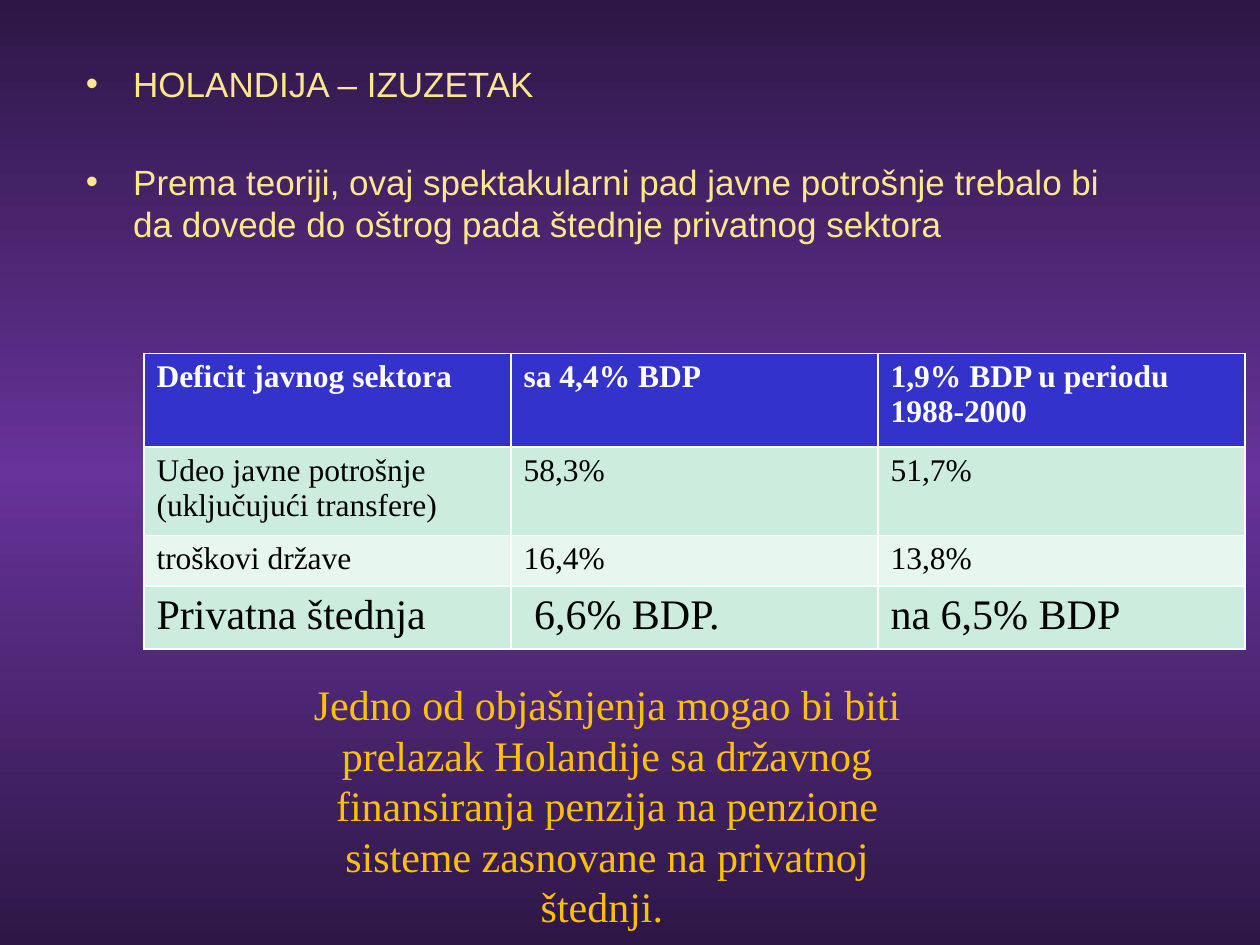
"""Build a slide on the Dutch exception: public spending and private savings."""
from copy import deepcopy

from lxml.etree import SubElement
from pptx import Presentation
from pptx.dml.color import RGBColor
from pptx.enum.text import PP_ALIGN
from pptx.oxml.ns import qn
from pptx.util import Pt

BACKGROUND_STOPS = [(0, "2E1746"), (50000, "663399"), (100000, "2E1746")]
BULLETS = [
    ("HOLANDIJA – IZUZETAK", 4),
    ("Prema teoriji, ovaj spektakularni pad javne potrošnje trebalo bi "
     "da dovede do oštrog pada štednje privatnog sektora", 32),
]
BULLET_INDENT = 27
TABLE_ROWS = [
    (["Deficit javnog sektora", "sa 4,4% BDP", "1,9% BDP u periodu 1988-2000"],
     53.5, 18, "3333CC", "FFFFFF"),
    (["Udeo javne potrošnje (uključujući transfere)", "58,3%", "51,7%"],
     47.5, 18, "CCECDE", "000000"),
    (["troškovi države ", "16,4%", "13,8%"], 29, 18, "E7F6EF", "000000"),
    (["Privatna štednja", " 6,6% BDP. ", "na 6,5% BDP"],
     34, 24, "CCECDE", "000000"),
]
COLUMN_WIDTH = 209.75
CONCLUSION = (
    "Jedno od objašnjenja mogao bi biti prelazak Holandije sa državnog "
    "finansiranja penzija na penzione sisteme zasnovane na privatnoj štednji. "
)


def color(value):
    return RGBColor.from_string(value)


def write(paragraph, text, font_name, size, font_color, bold=False):
    paragraph.text = text
    for run in paragraph.runs:
        run.font.name = font_name
        run.font.size = Pt(size)
        run.font.bold = bold
        run.font.color.rgb = color(font_color)


def paint_background(slide):
    fill = slide.background.fill
    fill.gradient()
    fill.gradient_angle = 270
    stop_list = slide.element.find(".//" + qn("a:gsLst"))
    template = deepcopy(stop_list[0])
    for stop in list(stop_list):
        stop_list.remove(stop)
    for position, value in BACKGROUND_STOPS:
        stop = deepcopy(template)
        stop.set("pos", str(position))
        for child in list(stop):
            stop.remove(child)
        SubElement(stop, qn("a:srgbClr"), val=value)
        stop_list.append(stop)


def add_text_frame(slide, left, top, width, height):
    box = slide.shapes.add_textbox(Pt(left), Pt(top), Pt(width), Pt(height))
    box.text_frame.word_wrap = True
    return box.text_frame


def add_bullets(slide):
    frame = add_text_frame(slide, 42, 32, 612, 384)
    for index, (text, space_before) in enumerate(BULLETS):
        paragraph = frame.paragraphs[0] if index == 0 else frame.add_paragraph()
        write(paragraph, text, "Arial", 20, "FCE78C")
        paragraph.space_before = Pt(space_before)
        properties = paragraph._p.get_or_add_pPr()
        properties.set("marL", str(Pt(BULLET_INDENT)))
        properties.set("indent", str(-Pt(BULLET_INDENT)))
        SubElement(properties, qn("a:buFont"), typeface="Arial")
        SubElement(properties, qn("a:buChar"), char="•")


def add_figures_table(slide):
    columns = len(TABLE_ROWS[0][0])
    height = sum(row[1] for row in TABLE_ROWS)
    table = slide.shapes.add_table(
        len(TABLE_ROWS), columns, Pt(82.25), Pt(202),
        Pt(COLUMN_WIDTH * columns), Pt(height)).table
    for column in table.columns:
        column.width = Pt(COLUMN_WIDTH)
    for row_index, (texts, height, size, fill, font_color) in enumerate(TABLE_ROWS):
        table.rows[row_index].height = Pt(height)
        for cell, text in zip(table.rows[row_index].cells, texts):
            cell.fill.solid()
            cell.fill.fore_color.rgb = color(fill)
            write(cell.text_frame.paragraphs[0], text, "Times New Roman",
                  size, font_color, bold=row_index == 0)


def add_conclusion(slide):
    frame = add_text_frame(slide, 167, 355, 360, 211)
    frame.margin_top = Pt(33)
    paragraph = frame.paragraphs[0]
    write(paragraph, CONCLUSION, "Times New Roman", 24, "FFC000")
    paragraph.alignment = PP_ALIGN.CENTER


def main():
    presentation = Presentation()
    presentation.slide_width, presentation.slide_height = Pt(720), Pt(540)
    slide = presentation.slides.add_slide(presentation.slide_layouts[6])
    paint_background(slide)
    add_bullets(slide)
    add_figures_table(slide)
    add_conclusion(slide)
    presentation.save("out.pptx")


if __name__ == "__main__":
    main()
